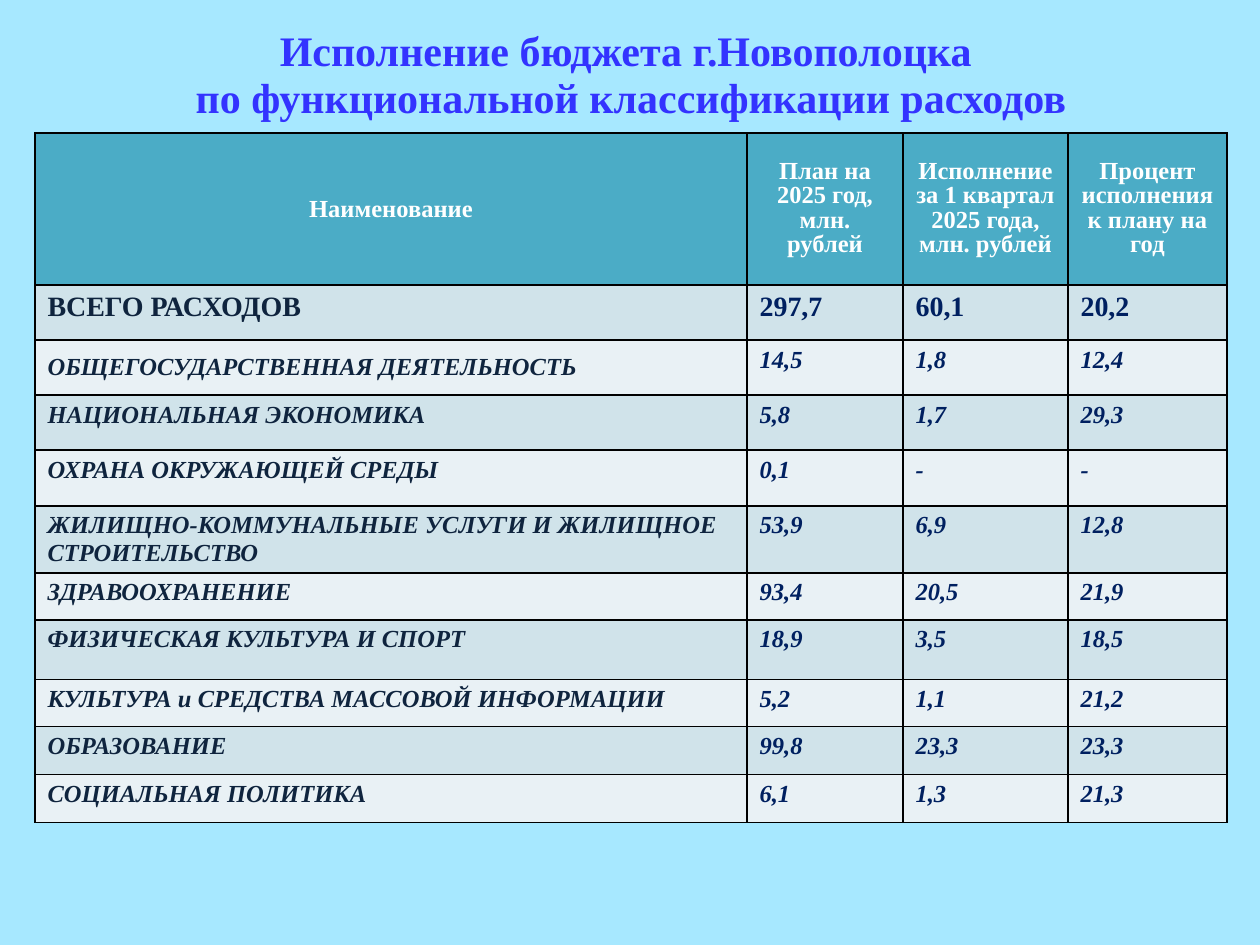
from lxml.etree import SubElement
from pptx import Presentation
from pptx.dml.color import RGBColor
from pptx.enum.text import MSO_ANCHOR, PP_ALIGN
from pptx.oxml.ns import qn
from pptx.util import Pt

PX = 914400 / 126
BACKGROUND = RGBColor(0xA7, 0xE8, 0xFF)
TITLE_BLUE = RGBColor(0x33, 0x33, 0xFF)
HEADER_TEAL = RGBColor(0x4B, 0xAC, 0xC6)
BAND_DARK = RGBColor(0xD0, 0xE3, 0xEA)
BAND_LIGHT = RGBColor(0xE9, 0xF1, 0xF5)
WHITE = RGBColor(0xFF, 0xFF, 0xFF)
NAME_NAVY = RGBColor(0x0F, 0x24, 0x3E)
NUMBER_NAVY = RGBColor(0x00, 0x20, 0x60)

HEADERS = ("Наименование", "План на 2025 год, млн. рублей",
           "Исполнение за 1 квартал 2025 года, млн. рублей",
           "Процент исполнения к плану на год")
# Row height in px, then the four cells
EXPENSES = [
    (55, "ВСЕГО РАСХОДОВ", "297,7", "60,1", "20,2"),
    (55, "ОБЩЕГОСУДАРСТВЕННАЯ ДЕЯТЕЛЬНОСТЬ", "14,5", "1,8", "12,4"),
    (55, "НАЦИОНАЛЬНАЯ ЭКОНОМИКА", "5,8", "1,7", "29,3"),
    (56, "ОХРАНА ОКРУЖАЮЩЕЙ СРЕДЫ", "0,1", "-", "-"),
    (67, "ЖИЛИЩНО-КОММУНАЛЬНЫЕ УСЛУГИ И ЖИЛИЩНОЕ СТРОИТЕЛЬСТВО", "53,9", "6,9", "12,8"),
    (47, "ЗДРАВООХРАНЕНИЕ", "93,4", "20,5", "21,9"),
    (60, "ФИЗИЧЕСКАЯ КУЛЬТУРА И СПОРТ", "18,9", "3,5", "18,5"),
    (47, "КУЛЬТУРА и СРЕДСТВА МАССОВОЙ ИНФОРМАЦИИ", "5,2", "1,1", "21,2"),
    (48, "ОБРАЗОВАНИЕ", "99,8", "23,3", "23,3"),
    (48, "СОЦИАЛЬНАЯ ПОЛИТИКА", "6,1", "1,3", "21,3"),
]
ROWS = [(152, *HEADERS)] + EXPENSES
COLUMN_WIDTHS = (712, 156, 165, 159)


def px(*lengths):
    return [round(length * PX) for length in lengths]


def style_cell(cell, text, size, color, fill, italic=False):
    """Fill the cell, set its bold text and draw black borders around it."""
    cell.text = text
    font = cell.text_frame.paragraphs[0].font
    font.name, font.size, font.bold, font.italic = "Times New Roman", Pt(size), True, italic
    font.color.rgb = color
    properties = cell._tc.get_or_add_tcPr()
    for side in ("a:lnL", "a:lnR", "a:lnT", "a:lnB"):
        border = SubElement(properties, qn(side), w=str(Pt(1)))
        SubElement(SubElement(border, qn("a:solidFill")), qn("a:srgbClr"), val="000000")
    cell.fill.solid()
    cell.fill.fore_color.rgb = fill


prs = Presentation()
prs.slide_width, prs.slide_height = px(1260, 945)
slide = prs.slides.add_slide(prs.slide_layouts[5])
slide.background.fill.solid()
slide.background.fill.fore_color.rgb = BACKGROUND

title = slide.shapes.title
title.left, title.top, title.width, title.height = px(64, 16, 1134, 117)
title.text_frame.text = "Исполнение бюджета г.Новополоцка \vпо функциональной классификации расходов"
title.text_frame.vertical_anchor = MSO_ANCHOR.MIDDLE
heading = title.text_frame.paragraphs[0]
heading.alignment = PP_ALIGN.CENTER
heading.line_spacing = Pt(27)
heading.font.name, heading.font.size, heading.font.bold = "Times New Roman", Pt(24), True
heading.font.color.rgb = TITLE_BLUE

table_size = px(35, 133, sum(COLUMN_WIDTHS), sum(row[0] for row in ROWS))
budget = slide.shapes.add_table(len(ROWS), len(COLUMN_WIDTHS), *table_size).table
for column, width in zip(budget.columns, px(*COLUMN_WIDTHS)):
    column.width = width

for r, (height, *texts) in enumerate(ROWS):
    budget.rows[r].height = px(height)[0]
    band = BAND_DARK if r % 2 else BAND_LIGHT
    for c, text in enumerate(texts):
        cell = budget.cell(r, c)
        if r == 0:
            style_cell(cell, text, 14, WHITE, HEADER_TEAL)
            cell.vertical_anchor = MSO_ANCHOR.MIDDLE
            label = cell.text_frame.paragraphs[0]
            label.alignment = PP_ALIGN.CENTER
            if c > 0:
                label.line_spacing = Pt(14)
        else:
            color = NUMBER_NAVY if c else NAME_NAVY
            style_cell(cell, text, 16 if r == 1 else 14, color, band, italic=r > 1)

general_activity = budget.cell(2, 0)
general_activity.vertical_anchor = MSO_ANCHOR.MIDDLE
general_activity.margin_top = general_activity.margin_bottom = 0

prs.save("out.pptx")
